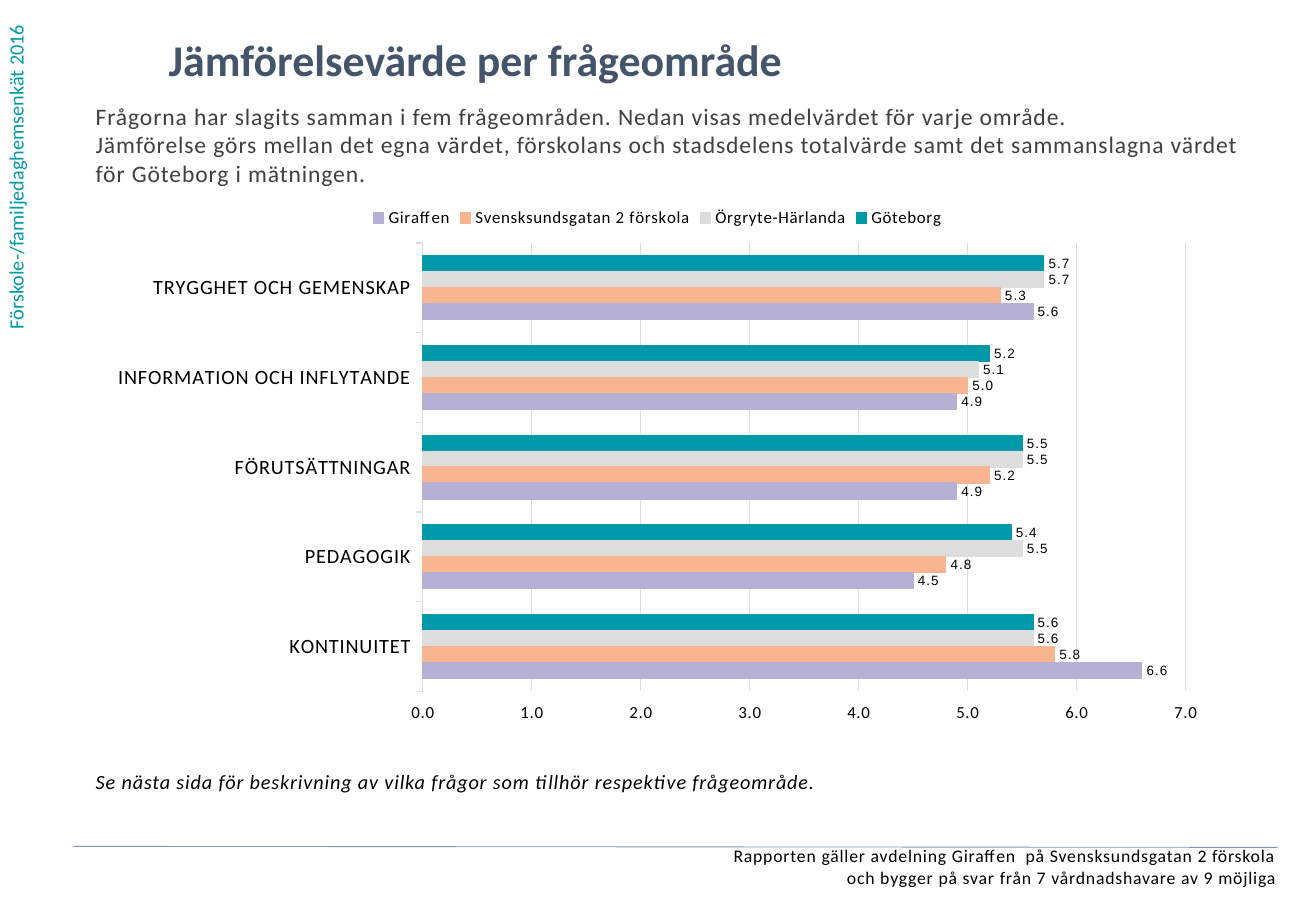
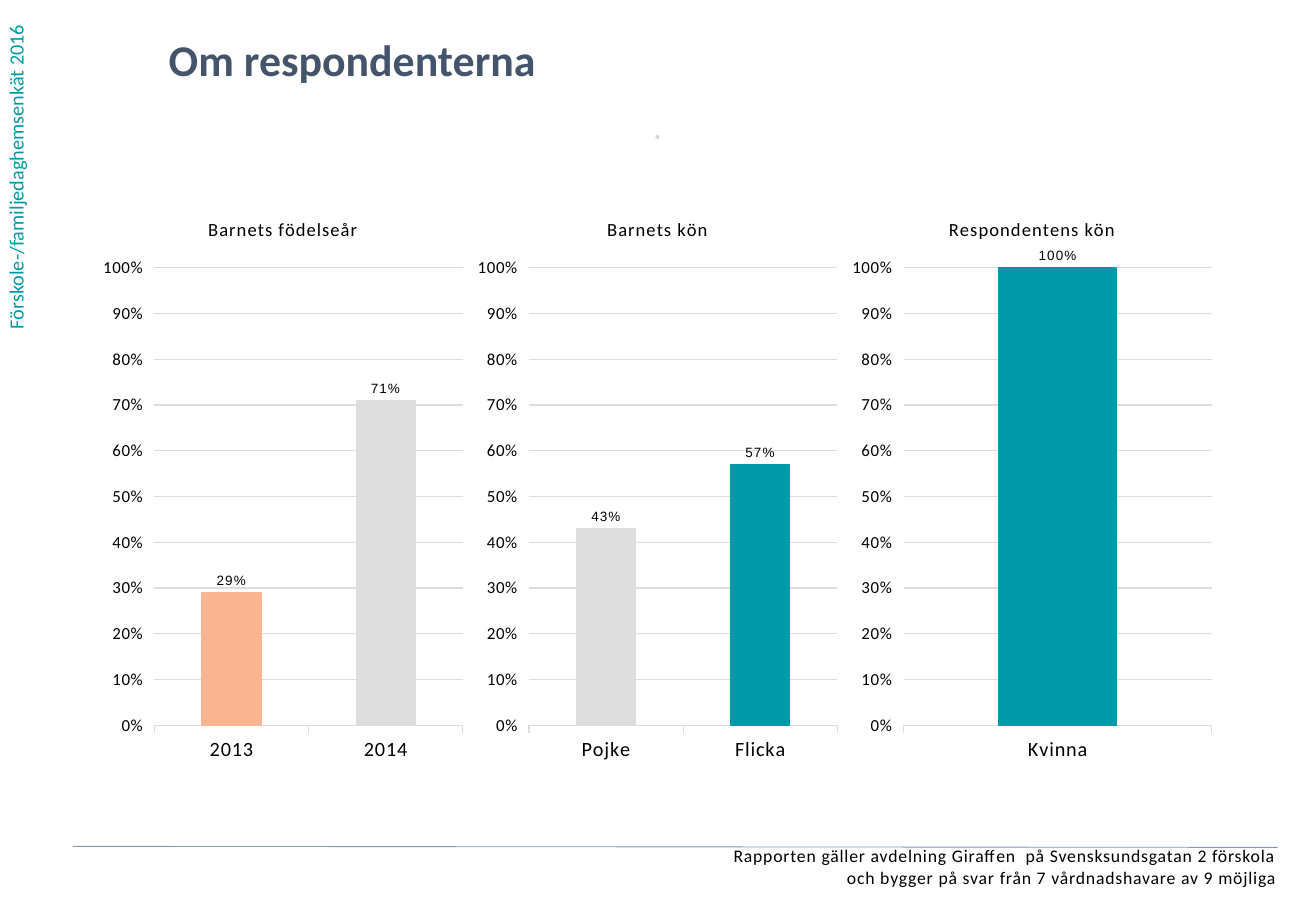
"""Builds two survey slides with native charts."""
import pptx
import pptx.chart.data
import pptx.dml.color
import pptx.enum.chart
import pptx.enum.shapes
import pptx.enum.text
import pptx.oxml
import pptx.oxml.ns
import pptx.util

Pt = pptx.util.Pt
qn = pptx.oxml.ns.qn
KIND = pptx.enum.chart.XL_CHART_TYPE
ALIGN = pptx.enum.text.PP_ALIGN

TEAL, GREY, PEACH, LILAC = "0099AA", "DDDDDD", "F9B590", "B6B1D4"
BLACK = "000000"
LEFT, TOP, WIDE = 56.7, 115.5, 666

HEAD = {"name": "Calibri", "size": Pt(26), "bold": True}
BODY = {"name": "Calibri", "size": Pt(14), "bold": False}
SIDE = {"name": "Calibri", "size": Pt(12)}
FOOT = {"name": "Calibri", "size": Pt(10.5)}
NOTE = {"name": "Calibri", "size": Pt(12), "italic": True}
MARK = {"name": "Calibri", "size": Pt(12), "bold": True}
PLOT = {"name": "Calibri", "size": Pt(10), "bold": False}
CAPTION = {"name": "Calibri", "size": Pt(11), "bold": False}
LABEL = {"name": "Arial", "size": Pt(8)}

AREAS = ["TRYGGHET OCH GEMENSKAP", "INFORMATION OCH INFLYTANDE",
         "FÖRUTSÄTTNINGAR", "PEDAGOGIK", "KONTINUITET"]
SCORES = [
    ("Göteborg", [5.7, 5.2, 5.5, 5.4, 5.6], TEAL),
    ("Örgryte-Härlanda", [5.7, 5.1, 5.5, 5.5, 5.6], GREY),
    ("Svensksundsgatan 2 förskola", [5.3, 5, 5.2, 4.8, 5.8], PEACH),
    ("Giraffen", [5.6, 4.9, 4.9, 4.5, 6.6], LILAC),
]
SHARES = [
    ("Barnets födelseår", ["2014", "2013"], [0.71, 0.29], [GREY, PEACH]),
    ("Barnets kön", ["Flicka", "Pojke"], [0.57, 0.43], [TEAL, GREY]),
    ("Respondentens kön", ["Kvinna"], [1], [TEAL]),
]


def tint(code):
    """Turn a hex string into a colour."""
    return pptx.dml.color.RGBColor.from_string(code)


def apply(thing, style):
    """Set each attribute named in a style."""
    for key, value in style.items():
        setattr(thing, key, value)


def style_font(font, style, code):
    """Format a font and give it a colour."""
    apply(font, style)
    font.color.rgb = tint(code)


def space(element):
    """Spread the letters by half a point."""
    for tag in ("a:rPr", "a:defRPr"):
        for item in element.iter(qn(tag)):
            item.set("spc", "50")


def place(shape, left, top, width, height):
    """Move and size a shape in points."""
    apply(shape, {"left": Pt(left), "top": Pt(top),
                  "width": Pt(width), "height": Pt(height)})


def write(shape, lines, style, code, align=ALIGN.LEFT, inset=0):
    """Put lines of text, split by line breaks, into a shape."""
    frame = shape.text_frame
    apply(frame, {"word_wrap": True,
                  "auto_size": pptx.enum.text.MSO_AUTO_SIZE.NONE,
                  "vertical_anchor": pptx.enum.text.MSO_ANCHOR.TOP})
    for side in ("left", "top", "right", "bottom"):
        setattr(frame, "margin_" + side, Pt(inset))
    para = frame.paragraphs[0]
    para.text = "\v".join(lines)
    apply(para, {"alignment": align, "space_before": Pt(0)})
    for run in para.runs:
        style_font(run.font, style, code)


def add_text(slide, spot, lines, style, code, **more):
    """Add a text box."""
    box = slide.shapes.add_textbox(*map(Pt, spot))
    write(box, lines, style, code, **more)
    return box


def add_page(deck, index, title):
    """Add a slide with the shared title, side text and footer."""
    slide = deck.slides.add_slide(deck.slide_layouts[index])
    head = slide.shapes.title
    place(head, 100, 19.5, 600, 41)
    write(head, [title], HEAD, "44546A")
    side = add_text(slide, (-1.5, 0, 29, 202.2),
                    ["Förskole-/familjedaghemsenkät 2016"],
                    SIDE, "009BA4", inset=3.6)
    frame = side.text_frame
    apply(frame, {"margin_left": Pt(7.2), "margin_right": Pt(7.2)})
    side.element.txBody.find(qn("a:bodyPr")).set("vert", "vert270")
    foot = add_text(slide, (8.5, 501, 748.3, 31), [
        "Rapporten gäller avdelning Giraffen  på Svensksundsgatan 2 förskola",
        "och bygger på svar från 7 vårdnadshavare av 9 möjliga"],
        FOOT, BLACK, align=ALIGN.RIGHT)
    space(foot.element)
    add_text(slide, (278.7, 73.5, 222, 28), ["⋅"], MARK, "D2D9E2",
             align=ALIGN.CENTER)
    add_rule(slide)
    return slide


def add_rule(slide):
    """Draw the thin line above the footer."""
    line = slide.shapes.add_connector(
        pptx.enum.shapes.MSO_CONNECTOR.STRAIGHT,
        Pt(43.2), Pt(501.7), Pt(757.2), Pt(502.3))
    line.line.color.rgb = tint("8497B0")
    line.line.width = Pt(0.5)
    line.element.spPr.append(pptx.oxml.parse_xml(
        "<a:effectLst %s/>" % pptx.oxml.ns.nsdecls("a")))


def add_intro(slide, lines):
    """Fill the body placeholder with unmarked text."""
    body = slide.placeholders[1]
    place(body, LEFT, 60.3, 681, 73)
    write(body, lines, BODY, "404040")
    for para in body.element.iter(qn("a:pPr")):
        para.set("marL", "0")
        para.set("indent", "0")
        para.append(pptx.oxml.parse_xml(
            "<a:buNone %s/>" % pptx.oxml.ns.nsdecls("a")))
    space(body.element)


def paint(form, code):
    """Fill and outline a bar in one colour."""
    form.fill.solid()
    form.fill.fore_color.rgb = tint(code)
    form.line.color.rgb = tint(code)
    form.line.width = Pt(0.75)


def add_chart(slide, kind, spot, groups, rows, code, top, step):
    """Add a clustered chart with labelled bars."""
    data = pptx.chart.data.CategoryChartData()
    data.categories = groups
    for name, values, _ in rows:
        data.add_series(name, values)
    chart = slide.shapes.add_chart(kind, *map(Pt, spot), data).chart
    chart.has_title = chart.has_legend = False
    style_font(chart.font, PLOT, BLACK)
    plot = chart.plots[0]
    apply(plot, {"gap_width": 162, "overlap": 0,
                 "vary_by_categories": False, "has_data_labels": True})
    apply(plot.data_labels, {
        "show_value": True, "number_format": code,
        "number_format_is_linked": False,
        "position": pptx.enum.chart.XL_LABEL_POSITION.OUTSIDE_END})
    style_font(plot.data_labels.font, LABEL, BLACK)
    for series, (_, _, shade) in zip(plot.series, rows):
        paint(series.format, shade)
    style_axes(chart, code, top, step)
    return chart


def style_axes(chart, code, top, step):
    """Format both axes and the grid."""
    outside = pptx.enum.chart.XL_TICK_MARK.OUTSIDE
    groups, scale = chart.category_axis, chart.value_axis
    apply(groups, {"reverse_order": True, "major_tick_mark": outside})
    apply(scale, {"minimum_scale": 0, "maximum_scale": top,
                  "major_unit": step, "major_tick_mark": outside,
                  "has_major_gridlines": True, "tick_label_position":
                  pptx.enum.chart.XL_TICK_LABEL_POSITION.HIGH})
    apply(scale.tick_labels, {"number_format": code,
                              "number_format_is_linked": False})
    style_font(groups.tick_labels.font, SIDE, BLACK)
    style_font(scale.tick_labels.font, PLOT, BLACK)
    scale.format.line.fill.background()
    for form in (groups.format, scale.major_gridlines.format):
        form.line.color.rgb = tint(GREY)
        form.line.width = Pt(0.75)


def add_scores(slide):
    """Add the bar chart of mean scores with its legend."""
    chart = add_chart(slide, KIND.BAR_CLUSTERED, (LEFT, TOP, WIDE, 319),
                      AREAS, SCORES, "0.0;0.0", 7, 1)
    chart.has_legend = True
    apply(chart.legend, {
        "position": pptx.enum.chart.XL_LEGEND_POSITION.TOP,
        "include_in_layout": False})
    style_font(chart.legend.font, PLOT, BLACK)
    space(chart.element)


def add_share(slide, order, title, groups, values, shades):
    """Add one titled column chart of shares."""
    width = WIDE / len(SHARES)
    chart = add_chart(slide, KIND.COLUMN_CLUSTERED,
                      (LEFT + order * width, TOP, width, 342.7), groups,
                      [("Series 1", values, TEAL)], "0%;0%", 1, 0.1)
    chart.has_title = True
    frame = chart.chart_title.text_frame
    frame.text = title
    style_font(frame.paragraphs[0].runs[0].font, CAPTION, BLACK)
    chart.chart_title.include_in_layout = False
    for index, shade in enumerate(shades):
        paint(chart.plots[0].series[0].points[index].format, shade)
    space(chart.element)


def main():
    """Build and save the deck."""
    deck = pptx.Presentation()
    apply(deck, {"slide_width": Pt(780), "slide_height": Pt(540)})

    first = add_page(deck, 1, "Jämförelsevärde per frågeområde")
    add_intro(first, [
        "Frågorna har slagits samman i fem frågeområden. "
        "Nedan visas medelvärdet för varje område.",
        "Jämförelse görs mellan det egna värdet, förskolans och stadsdelens "
        "totalvärde samt det sammanslagna värdet för Göteborg i mätningen."])
    add_scores(first)
    note = add_text(first, (LEFT, 456, WIDE, 30), [
        "Se nästa sida för beskrivning av vilka frågor som tillhör "
        "respektive frågeområde."], NOTE, BLACK)
    space(note.element)

    second = add_page(deck, 5, "Om respondenterna")
    for order, share in enumerate(SHARES):
        add_share(second, order, *share)
    deck.save("out.pptx")


if __name__ == "__main__":
    main()
